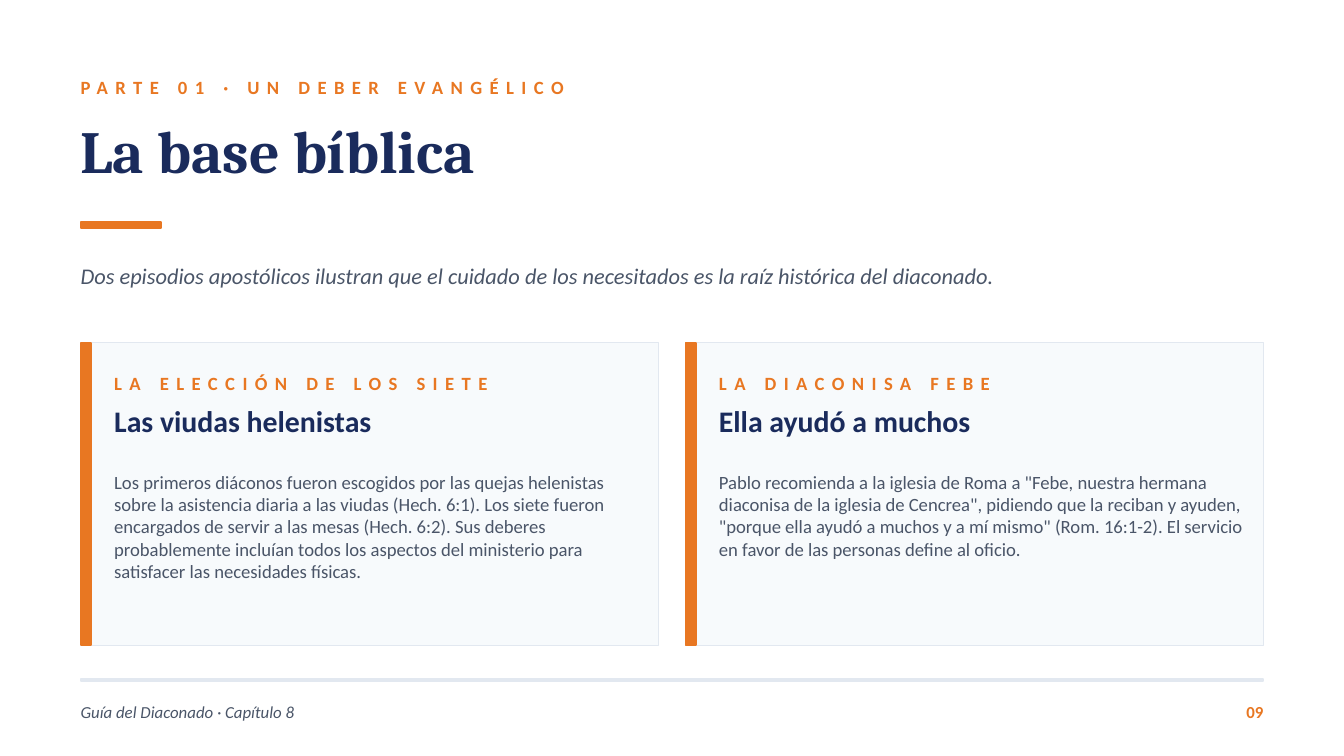
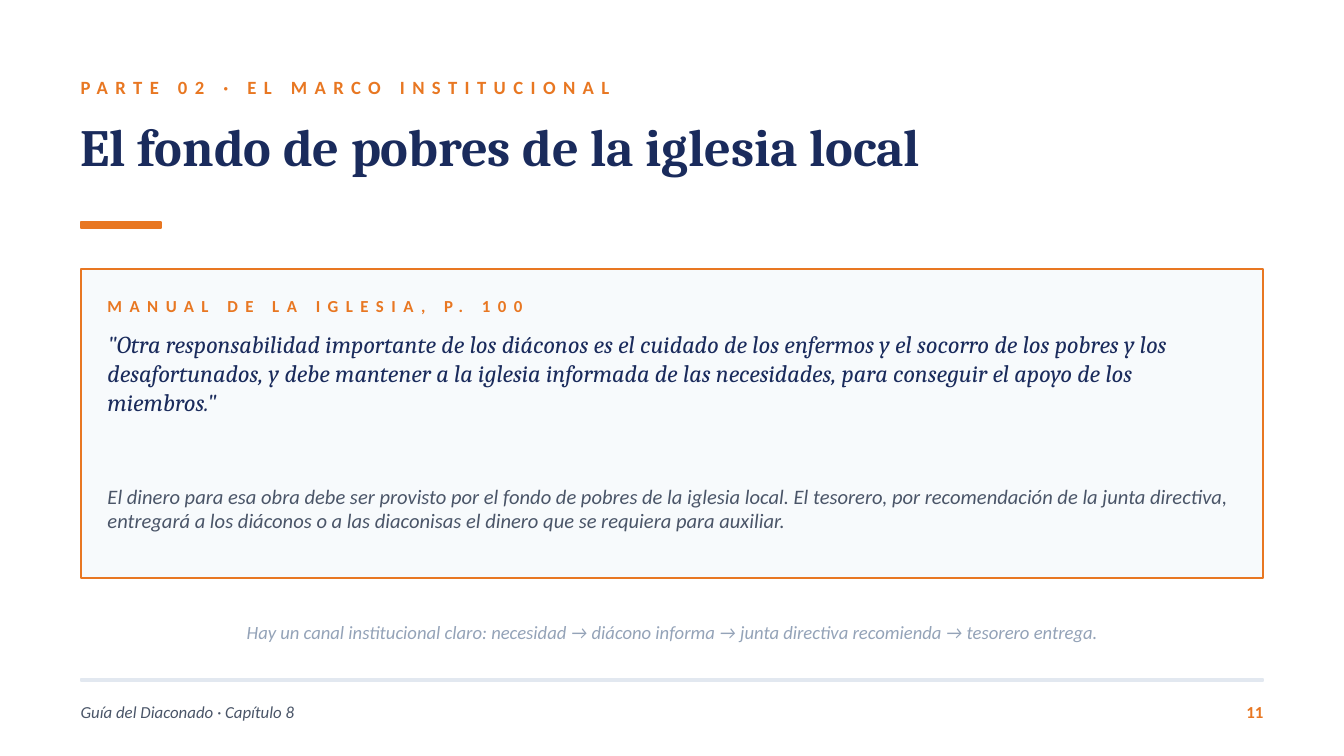
from pptx import Presentation
from pptx.dml.color import RGBColor
from pptx.enum import shapes, text
from pptx.util import Inches, Pt

# Content
FOOTER = "Guía del Diaconado · Capítulo 8"

BIBLE = {
    "part": "PARTE 01 · UN DEBER EVANGÉLICO",
    "title": "La base bíblica",
    "title_size": 32,
    "number": "09",
    "lead": "Dos episodios apostólicos ilustran que el cuidado de los necesitados "
            "es la raíz histórica del diaconado.",
    "cards": [
        ("LA ELECCIÓN DE LOS SIETE", "Las viudas helenistas",
         "Los primeros diáconos fueron escogidos por las quejas helenistas sobre la "
         "asistencia diaria a las viudas (Hech. 6:1). Los siete fueron encargados de "
         "servir a las mesas (Hech. 6:2). Sus deberes probablemente incluían todos los "
         "aspectos del ministerio para satisfacer las necesidades físicas."),
        ("LA DIACONISA FEBE", "Ella ayudó a muchos",
         'Pablo recomienda a la iglesia de Roma a "Febe, nuestra hermana diaconisa de la '
         'iglesia de Cencrea", pidiendo que la reciban y ayuden, "porque ella ayudó a '
         'muchos y a mí mismo" (Rom. 16:1-2). El servicio en favor de las personas '
         "define al oficio."),
    ],
}

FUND = {
    "part": "PARTE 02 · EL MARCO INSTITUCIONAL",
    "title": "El fondo de pobres de la iglesia local",
    "title_size": 28,
    "number": "11",
    "source": "MANUAL DE LA IGLESIA, P. 100",
    "quote": '"Otra responsabilidad importante de los diáconos es el cuidado de los enfermos '
             "y el socorro de los pobres y los desafortunados, y debe mantener a la iglesia "
             'informada de las necesidades, para conseguir el apoyo de los miembros."',
    "comment": "El dinero para esa obra debe ser provisto por el fondo de pobres de la iglesia "
               "local. El tesorero, por recomendación de la junta directiva, entregará a los "
               "diáconos o a las diaconisas el dinero que se requiera para auxiliar.",
    "summary": "Hay un canal institucional claro: necesidad → diácono informa → "
               "junta directiva recomienda → tesorero entrega.",
}

# Shared style
COLORS = {
    "accent": "E87722",
    "navy": "1A2B5C",
    "body": "4A5568",
    "muted": "94A3B8",
    "panel": "F7FAFC",
    "rule": "E2E8F0",
}
BODY_FONT, TITLE_FONT = "Calibri", "Cambria"
LEFT, WIDTH = 0.6, 8.8
RIGHT = LEFT + WIDTH
CARD_TOP, CARD_HEIGHT, CARD_GAP = 2.55, 2.25, 0.2


def color(name):
    return RGBColor.from_string(COLORS[name])


def add_rect(slide, left, top, width, height, fill, line=None, line_width=1):
    shape = slide.shapes.add_shape(
        shapes.MSO_SHAPE.RECTANGLE, Inches(left), Inches(top), Inches(width), Inches(height))
    shape.shadow.inherit = False
    shape.fill.solid()
    shape.fill.fore_color.rgb = color(fill)
    shape.line.color.rgb = color(line or fill)
    shape.line.width = Pt(line_width)


def add_text(slide, left, top, width, height, content, size, ink="body", font=BODY_FONT,
             bold=False, italic=False, middle=False, align="LEFT", spacing=0):
    box = slide.shapes.add_textbox(Inches(left), Inches(top), Inches(width), Inches(height))
    frame = box.text_frame
    frame.word_wrap = True
    frame.margin_left = frame.margin_right = frame.margin_top = frame.margin_bottom = 0
    frame.vertical_anchor = text.MSO_ANCHOR.MIDDLE if middle else text.MSO_ANCHOR.TOP
    paragraph = frame.paragraphs[0]
    paragraph.alignment = text.PP_ALIGN[align]
    run = paragraph.add_run()
    run.text = content
    if spacing:
        run._r.get_or_add_rPr().set("spc", str(spacing * 100))
    paragraph.font.name = font
    paragraph.font.size = Pt(size)
    paragraph.font.bold = bold
    paragraph.font.italic = italic
    paragraph.font.color.rgb = color(ink)


def add_label(slide, left, top, width, height, content, size=10):
    add_text(slide, left, top, width, height, content, size, "accent",
             bold=True, middle=True, spacing=4)


def add_header(slide, content):
    add_label(slide, LEFT, 0.5, 7, 0.3, content["part"])
    add_text(slide, LEFT, 0.85, 9, 0.7, content["title"], content["title_size"],
             "navy", TITLE_FONT, bold=True)
    add_rect(slide, LEFT, 1.65, 0.6, 0.05, "accent")


def add_footer(slide, number):
    add_rect(slide, LEFT, 5.05, WIDTH, 0.02, "rule")
    add_text(slide, LEFT, 5.15, 6, 0.3, FOOTER, 9, italic=True, middle=True)
    add_text(slide, RIGHT - 0.5, 5.15, 0.5, 0.3, number, 9, "accent",
             bold=True, middle=True, align="RIGHT")


def add_cards(slide, cards):
    width = (WIDTH - CARD_GAP * (len(cards) - 1)) / len(cards)
    for index, (label, heading, body) in enumerate(cards):
        left = LEFT + index * (width + CARD_GAP)
        inner = left + 0.25
        add_rect(slide, left, CARD_TOP, width, CARD_HEIGHT, "panel", "rule", 0.5)
        add_rect(slide, left, CARD_TOP, 0.08, CARD_HEIGHT, "accent")
        add_label(slide, inner, CARD_TOP + 0.15, 4, 0.3, label)
        add_text(slide, inner, CARD_TOP + 0.45, 4, 0.4, heading, 16, "navy", bold=True)
        add_text(slide, inner, CARD_TOP + 0.95, 3.9, 1.25, body, 10)


def build_bible(slide):
    add_text(slide, LEFT, 1.95, 9, 0.45, BIBLE["lead"], 12, italic=True)
    add_cards(slide, BIBLE["cards"])


def build_fund(slide):
    inner, inner_width = LEFT + 0.2, WIDTH - 0.4
    add_rect(slide, LEFT, 2, WIDTH, 2.3, "panel", "accent")
    add_label(slide, inner, 2.15, 6, 0.25, FUND["source"], 9)
    add_text(slide, inner, 2.45, inner_width, 1.1, FUND["quote"], 13, "navy",
             TITLE_FONT, italic=True)
    add_text(slide, inner, 3.6, inner_width, 0.7, FUND["comment"], 11, italic=True)
    add_text(slide, LEFT, 4.55, WIDTH, 0.3, FUND["summary"], 10, "muted",
             italic=True, middle=True, align="CENTER")


def main():
    presentation = Presentation()
    # Widescreen, 16:9
    presentation.slide_width = Inches(10)
    presentation.slide_height = Inches(10 * 9 / 16)
    blank = presentation.slide_layouts[6]
    for content, build in ((BIBLE, build_bible), (FUND, build_fund)):
        slide = presentation.slides.add_slide(blank)
        add_header(slide, content)
        build(slide)
        add_footer(slide, content["number"])
    presentation.save("out.pptx")


if __name__ == "__main__":
    main()
